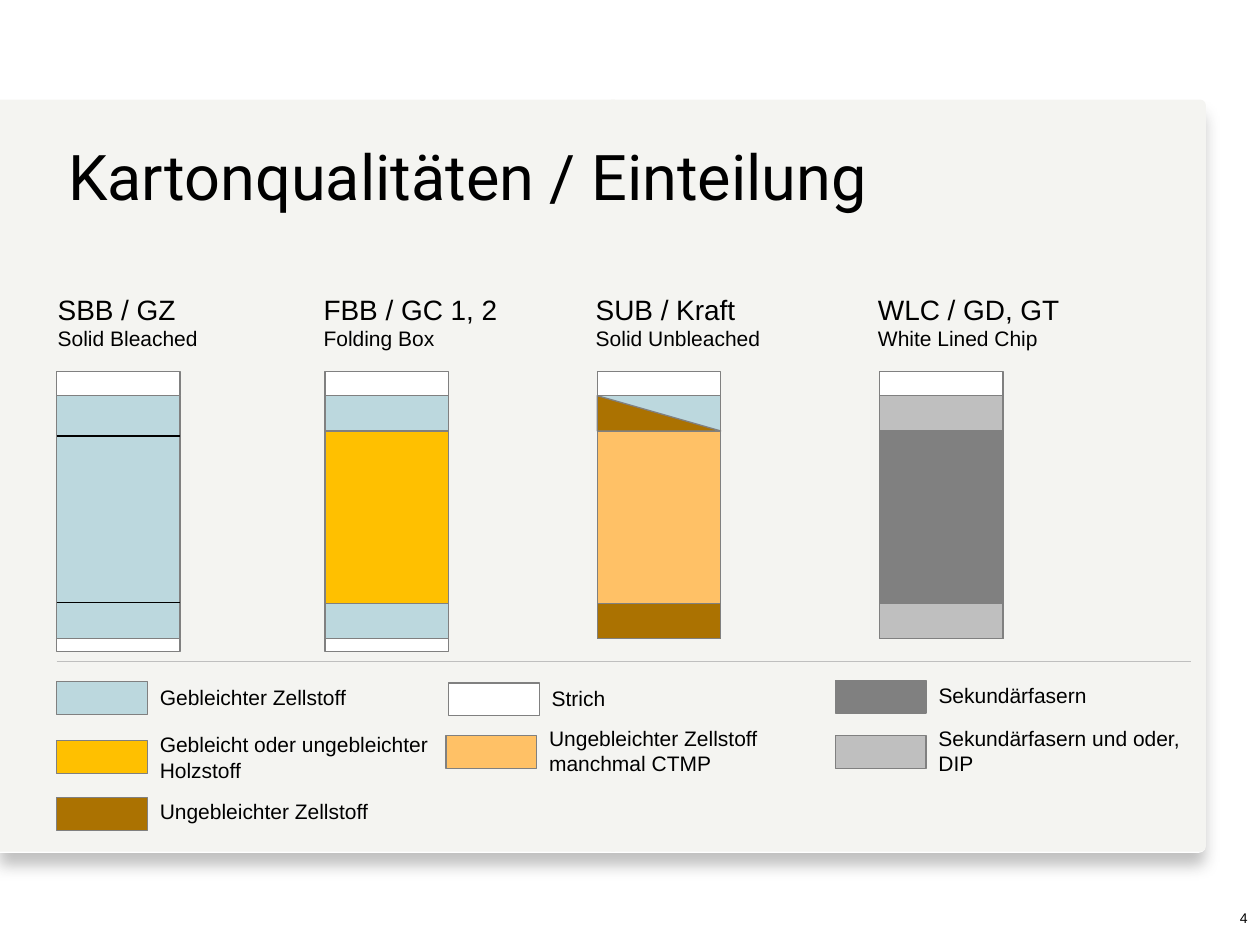
import pptx
import pptx.util
from lxml import etree
from pptx.dml.color import RGBColor
from pptx.enum.shapes import MSO_CONNECTOR, MSO_SHAPE
from pptx.enum.text import MSO_ANCHOR, PP_ALIGN
from pptx.oxml import parse_xml
from pptx.oxml.ns import qn
from pptx.util import Inches, Pt

BLACK = RGBColor(0x00, 0x00, 0x00)
WHITE = RGBColor(0xFF, 0xFF, 0xFF)
CREAM = RGBColor(0xF4, 0xF4, 0xF1)
BLUE = RGBColor(0xBC, 0xD8, 0xDE)
YELLOW = RGBColor(0xFF, 0xC0, 0x00)
BROWN = RGBColor(0xAB, 0x72, 0x01)
ORANGE = RGBColor(0xFF, 0xC1, 0x66)
GREY = RGBColor(0x80, 0x80, 0x80)
LIGHT_GREY = RGBColor(0xBF, 0xBF, 0xBF)

# Content
TITLE = "Kartonqualitäten / Einteilung"
PAGE_NUMBER = "4"

# left, text left, text width, name, description, core, upper ply, lower ply, back coating
BOARDS = [
    (0.45, 0.36, 1.34, "SBB / GZ", "Solid Bleached", BLUE, None, None, True),
    (2.58, 2.47, 1.60, "FBB / GC 1, 2", "Folding Box", YELLOW, BLUE, BLUE, True),
    (4.74, 4.63, 1.54, "SUB / Kraft", "Solid Unbleached", ORANGE, BLUE, BROWN, False),
    (6.98, 6.87, 1.66, "WLC / GD, GT", "White Lined Chip", GREY, LIGHT_GREY, LIGHT_GREY, False),
]

# swatch left, swatch top, text top, text width, colour, lines
LEGEND = [
    (0.45, 5.41, 5.38, 1.69, BLUE, ["Gebleichter Zellstoff"]),
    (0.45, 5.88, 5.76, 2.34, YELLOW, ["Gebleicht oder ungebleichter", "Holzstoff"]),
    (0.45, 6.33, 6.29, 1.87, BROWN, ["Ungebleichter Zellstoff"]),
    (3.56, 5.42, 5.39, 0.63, WHITE, ["Strich"]),
    (3.54, 5.84, 5.71, 1.86, ORANGE, ["Ungebleichter Zellstoff", "manchmal CTMP"]),
    (6.63, 5.40, 5.37, 1.39, GREY, ["Sekundärfasern"]),
    (6.63, 5.84, 5.71, 2.13, LIGHT_GREY, ["Sekundärfasern und oder,", "DIP"]),
]

# Layer geometry
BOARD_W, COAT_TOP, CORE_TOP, CORE_BOTTOM = 0.98, 2.95, 3.14, 5.07
PLY_H, BACK_H = 0.28, 0.10
SWATCH_W, SWATCH_H = 0.72, 0.26

SHADOW = """<a:effectLst xmlns:a="http://schemas.openxmlformats.org/drawingml/2006/main">
<a:outerShdw blurRad="101600" dist="101600" dir="5400000" algn="tl" rotWithShape="0">
<a:srgbClr val="323232"><a:alpha val="30000"/></a:srgbClr></a:outerShdw></a:effectLst>"""


def add_block(s, box, fill, line=GREY, kind=MSO_SHAPE.RECTANGLE):
    sp = s.shapes.add_shape(kind, *map(Inches, box))
    sp.shadow.inherit = False
    sp.fill.solid()
    sp.fill.fore_color.rgb = fill
    if line is None:
        sp.line.fill.background()
    else:
        sp.line.color.rgb = line
        sp.line.width = Pt(0.75)
    return sp


def add_rounded_right(s, box, fill):
    """Block whose two right-hand corners are slightly rounded."""
    x, y, w, h = box
    turned = (x + (w - h) / 2, y + (h - w) / 2, h, w)
    sp = add_block(s, turned, fill, None, MSO_SHAPE.ROUND_2_SAME_RECTANGLE)
    sp.rotation = 90
    sp.adjustments[0] = 0.01
    return sp


def add_rule(s, x1, x2, y, color):
    c = s.shapes.add_connector(MSO_CONNECTOR.STRAIGHT, *map(Inches, (x1, y, x2, y)))
    c.line.color.rgb = color
    c.line.width = Pt(0.75)
    etree.SubElement(c._element.spPr, qn("a:effectLst"))


def write(p, lines, font="Arial"):
    """Write (text, size) lines into one paragraph."""
    for i, (text, size) in enumerate(lines):
        if i:
            p.add_line_break()
        r = p.add_run()
        r.text = text
        for key, value in {"name": font, "size": Pt(size)}.items():
            setattr(r.font, key, value)
        r.font.color.rgb = BLACK


def add_text(s, box, lines, wrap=False, align=PP_ALIGN.LEFT):
    tf = s.shapes.add_textbox(*map(Inches, box)).text_frame
    tf.word_wrap = wrap
    tf.paragraphs[0].alignment = align
    write(tf.paragraphs[0], lines)


def main():
    prs = pptx.Presentation()
    prs.slide_width, prs.slide_height = Inches(10), Inches(7.5)
    s = prs.slides.add_slide(prs.slide_layouts[5])

    # Background panel, placed behind the title
    title = s.shapes.title
    backing = add_rounded_right(s, (0, 0.8, 9.57, 5.97), WHITE)
    backing.element.spPr.remove(backing.element.spPr.find(qn("a:effectLst")))
    backing.element.spPr.append(parse_xml(SHADOW))
    left_half = add_block(s, (0, 0.79, 4.88, 5.97), CREAM, None)
    right_half = add_rounded_right(s, (4.85, 0.79, 4.72, 5.97), CREAM)
    for sp in (backing, left_half, right_half):
        title.element.addprevious(sp.element)

    # Title
    place = {"left": 0.44, "top": 1.05, "width": 8.65, "height": 0.68}
    for key, value in place.items():
        setattr(title, key, Inches(value))
    title.text_frame.vertical_anchor = MSO_ANCHOR.MIDDLE
    title.text_frame.paragraphs[0].alignment = PP_ALIGN.LEFT
    write(title.text_frame.paragraphs[0], [(TITLE, 36)], "Roboto")

    # Board cross-sections
    for x, text_x, text_w, name, description, core, upper, lower, back in BOARDS:
        layers = [
            (CORE_BOTTOM, BACK_H, WHITE if back else None),
            (CORE_TOP, CORE_BOTTOM - CORE_TOP, core),
            (COAT_TOP, CORE_TOP - COAT_TOP, WHITE),
            (CORE_TOP, PLY_H, upper),
            (CORE_BOTTOM - PLY_H, PLY_H, lower),
        ]
        for y, h, color in layers:
            if color is not None:
                add_block(s, (x, y, BOARD_W, h), color)
        if upper != lower:
            add_block(s, (x, CORE_TOP, BOARD_W, PLY_H), lower, kind=MSO_SHAPE.RIGHT_TRIANGLE)
        if upper is None:
            for y in (3.46, 4.78):
                add_rule(s, x, x + BOARD_W, y, BLACK)
        add_text(s, (text_x, 2.27, text_w, 0.57), [(name, 16), (description, 12)])

    # Legend
    add_rule(s, 0.45, 9.45, 5.25, LIGHT_GREY)
    for x, y, text_y, text_w, color, lines in LEGEND:
        add_block(s, (x, y, SWATCH_W, SWATCH_H), color)
        box = (x + SWATCH_W, text_y, text_w, 0.1 + 0.2 * len(lines))
        add_text(s, box, [(line, 12) for line in lines])

    # Page number
    add_text(s, (9.32, 7.17, 0.68, 0.33), [(PAGE_NUMBER, 8)], True, PP_ALIGN.RIGHT)

    prs.save("out.pptx")


if __name__ == "__main__":
    main()
